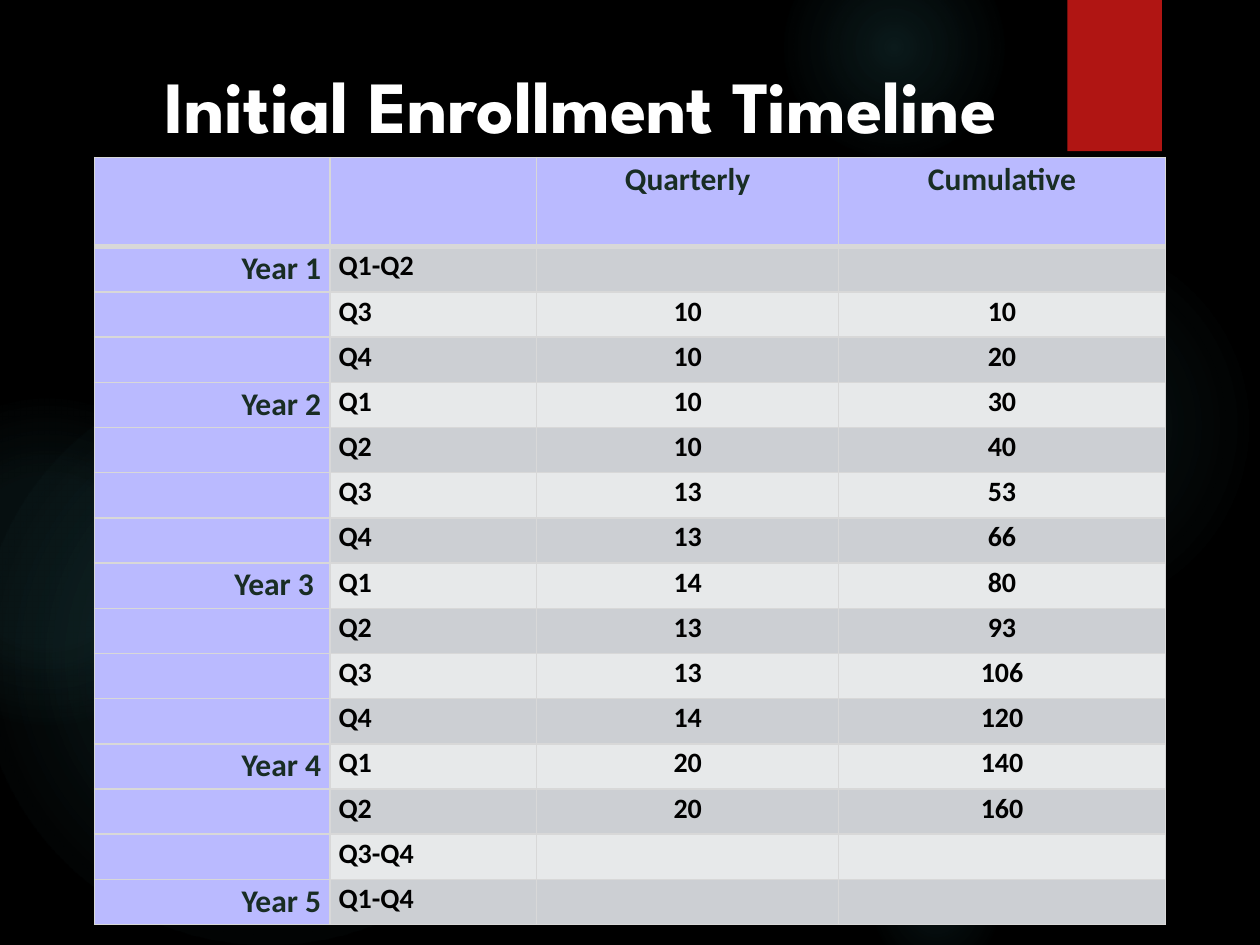
from lxml import etree
from pptx import Presentation
from pptx.dml.color import RGBColor
from pptx.enum.shapes import MSO_SHAPE
from pptx.enum.text import MSO_ANCHOR, PP_ALIGN
from pptx.oxml import parse_xml
from pptx.oxml.ns import nsdecls, qn
from pptx.util import Pt

OVAL, RECTANGLE = MSO_SHAPE.OVAL, MSO_SHAPE.RECTANGLE
TOP = MSO_ANCHOR.TOP
LEFT, CENTER, RIGHT = PP_ALIGN.LEFT, PP_ALIGN.CENTER, PP_ALIGN.RIGHT

BLACK = RGBColor(0x00, 0x00, 0x00)
WHITE = RGBColor(0xFF, 0xFF, 0xFF)
TEAL = RGBColor(0x50, 0xB9, 0xC1)
RED = RGBColor(0xB0, 0x15, 0x13)
LAVENDER = RGBColor(0xBA, 0xBA, 0xFF)
DARK_GREEN = RGBColor(0x19, 0x2D, 0x24)
DARK_BAND = RGBColor(0xCC, 0xCF, 0xD3)
LIGHT_BAND = RGBColor(0xE7, 0xE9, 0xEA)
GRID = RGBColor(0xD8, 0xD8, 0xD8)


def fill_with_glow(shape, stops):
    """Fill with a radial teal gradient; stops are (position %, opacity %)."""
    stop_xml = "".join(
        f'<a:gs pos="{position * 1000}"><a:srgbClr val="{TEAL}">'
        f'<a:alpha val="{opacity * 1000}"/></a:srgbClr></a:gs>'
        for position, opacity in stops)
    gradient = parse_xml(
        f'<a:gradFill {nsdecls("a")} rotWithShape="1"><a:gsLst>{stop_xml}</a:gsLst>'
        '<a:path path="circle"><a:fillToRect l="50000" t="50000" r="50000" b="50000"/>'
        '</a:path></a:gradFill>')
    shape._element.spPr.find(qn("a:prstGeom")).addnext(gradient)


def set_borders(cell, widths):
    """Draw the left, right, top and bottom borders, widths in points."""
    properties = cell._tc.get_or_add_tcPr()
    for side, width in zip("LRTB", widths):
        line = etree.SubElement(properties, qn(f"a:ln{side}"), w=str(Pt(width)))
        solid = etree.SubElement(line, qn("a:solidFill"))
        etree.SubElement(solid, qn("a:srgbClr"), val=str(GRID))


prs = Presentation()
prs.slide_width, prs.slide_height = Pt(720), Pt(540)
slide = prs.slides.add_slide(prs.slide_layouts[5])
slide.background.fill.solid()
slide.background.fill.fore_color.rgb = BLACK

# Backdrop: left, top, diameter, gradient stops
glows = [
    (496, 132, 222, [(0, 7), (36, 6), (69, 0)]),
    (448, -36, 126, [(0, 14), (36, 7), (73, 0)]),
    (496, 480, 78, [(0, 9), (36, 5), (66, 0)]),
    (-12, 210, 330, [(0, 11), (36, 10), (75, 0)]),
    (-66, 228, 186, [(0, 8), (36, 8), (72, 0)]),
]
for left, top, diameter, stops in glows:
    glow = slide.shapes.add_shape(OVAL, Pt(left), Pt(top), Pt(diameter), Pt(diameter))
    glow.shadow.inherit = False
    glow.line.fill.background()
    fill_with_glow(glow, stops)

ribbon = slide.shapes.add_shape(RECTANGLE, Pt(610), Pt(0), Pt(54), Pt(86.4))
ribbon.shadow.inherit = False
ribbon.fill.solid()
ribbon.fill.fore_color.rgb = RED
ribbon.line.fill.background()

title = slide.shapes.title
slide.shapes._spTree.append(title._element)  # in front of the backdrop
title.left, title.top, title.width, title.height = Pt(54), Pt(18), Pt(556), Pt(110)
title.text_frame.text = "Initial Enrollment Timeline"
title.text_frame.vertical_anchor = TOP
title.text_frame.margin_top = Pt(16.5)
title_font = title.text_frame.paragraphs[0].runs[0].font
title_font.name, title_font.size, title_font.bold = "League Spartan", Pt(42), True
title_font.color.rgb = WHITE

timeline = [
    ("", "", "Quarterly", "Cumulative"),
    ("Year 1", "Q1-Q2", "", ""),
    ("", "Q3", "10", "10"),
    ("", "Q4", "10", "20"),
    ("Year 2", "Q1", "10", "30"),
    ("", "Q2", "10", "40"),
    ("", "Q3", "13", "53"),
    ("", "Q4", "13", "66"),
    ("Year 3 ", "Q1", "14", "80"),
    ("", "Q2", "13", "93"),
    ("", "Q3", "13", "106"),
    ("", "Q4", "14", "120"),
    ("Year 4", "Q1", "20", "140"),
    ("", "Q2", "20", "160"),
    ("", "Q3-Q4", "", ""),
    ("Year 5", "Q1-Q4", "", ""),
]
column_widths = [134.5, 118.25, 172.5, 186.75]
alignments = [RIGHT, LEFT, CENTER, CENTER]
header_height, row_height = 51, 25.83

table = slide.shapes.add_table(
    len(timeline), len(column_widths), Pt(54), Pt(90), Pt(sum(column_widths)),
    Pt(header_height + row_height * (len(timeline) - 1))).table
for column, width in zip(table.columns, column_widths):
    column.width = Pt(width)

for r, entries in enumerate(timeline):
    table.rows[r].height = Pt(row_height if r else header_height)
    for c, entry in enumerate(entries):
        cell = table.cell(r, c)
        heading = r == 0 or c == 0
        set_borders(cell, (1, 1, 3 if r == 1 else 1, 3 if r == 0 else 1))
        cell.fill.solid()
        cell.fill.fore_color.rgb = LAVENDER if heading else DARK_BAND if r % 2 else LIGHT_BAND
        cell.margin_left = cell.margin_right = Pt(5)
        cell.margin_top = cell.margin_bottom = Pt(0)
        if not entry:
            continue
        paragraph = cell.text_frame.paragraphs[0]
        paragraph.text = entry
        paragraph.alignment = alignments[c]
        paragraph.line_spacing = 1.07
        font = paragraph.runs[0].font
        font.name, font.bold = "Calibri", True
        font.size = Pt(18 if heading else 16)
        font.color.rgb = DARK_GREEN if heading else BLACK

prs.save("out.pptx")
